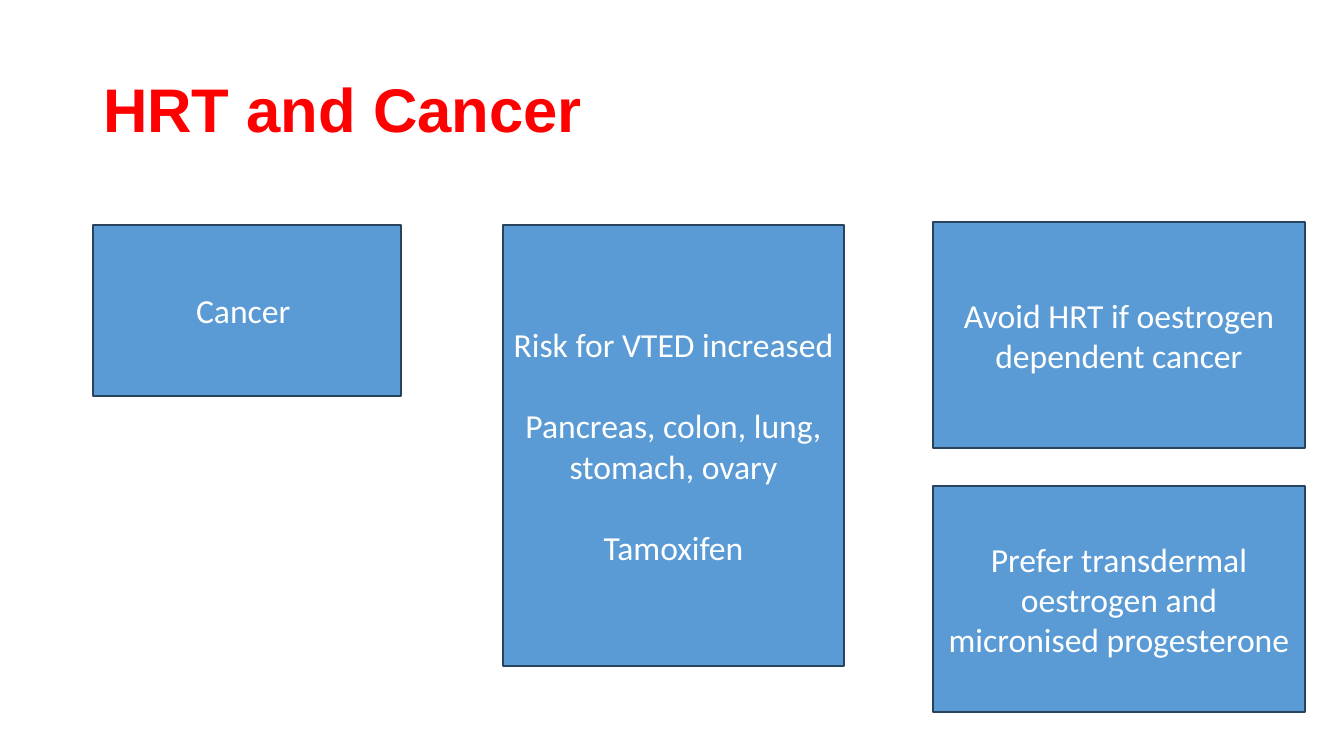
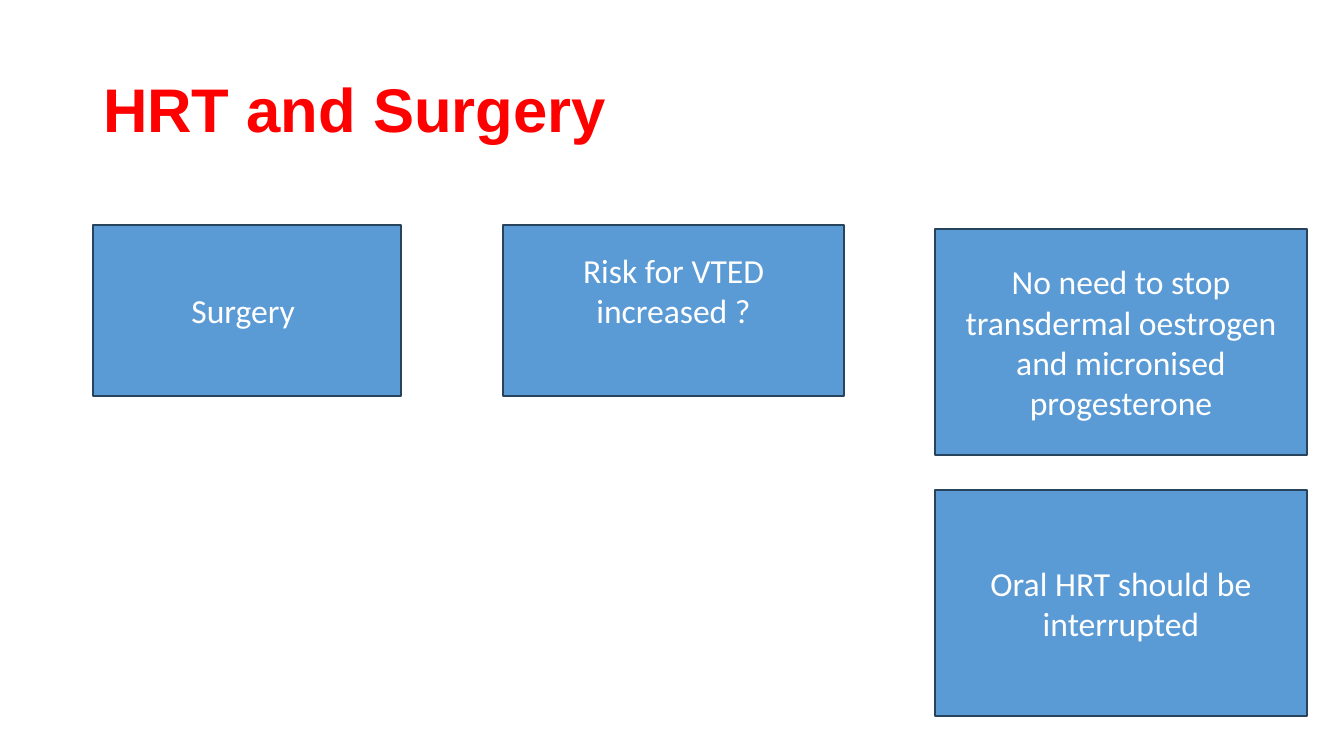
from pptx import Presentation
from pptx.dml.color import RGBColor
from pptx.enum.shapes import MSO_SHAPE
from pptx.enum.text import MSO_ANCHOR, MSO_AUTO_SIZE, PP_ALIGN
from pptx.util import Emu, Pt

RECTANGLE = MSO_SHAPE.RECTANGLE
MIDDLE = MSO_ANCHOR.MIDDLE
NO_FIT = MSO_AUTO_SIZE.NONE
LEFT, CENTER = PP_ALIGN.LEFT, PP_ALIGN.CENTER

EMU_PER_PX = 914400 / 100.8
PAGE_SIZE = (1344, 756)
TITLE_BOX = (93, 40, 1159, 146)
TITLE_ONLY = 5
COLORS = {
    "title": "FF0000",
    "card": "5B9BD5",
    "border": "28445D",
    "text": "FFFFFF",
}

TOPICS = [
    {
        "title": "HRT and Cancer",
        "condition": "Cancer ",
        "risk": ["Risk for VTED increased", "Pancreas, colon, lung, stomach, ovary", "Tamoxifen"],
        "risk_height": 441,
        "risk_gap": 29,
        "risk_inset": 5,
        "advice": ["Avoid HRT if oestrogen dependent cancer",
                   "Prefer transdermal oestrogen and micronised progesterone"],
        "advice_box": (933, 222, 372, 490),
    },
    {
        "title": "HRT and Surgery",
        "condition": "Surgery ",
        "risk": ["Risk for VTED", "increased ?"],
        "risk_height": 171,
        "risk_gap": 0,
        "risk_inset": 46,
        "advice": ["No need to stop transdermal oestrogen and micronised progesterone",
                   "Oral HRT should be interrupted"],
        "advice_box": (935, 229, 372, 487),
    },
]


def px(length):
    return Emu(round(length * EMU_PER_PX))


def color(name):
    return RGBColor.from_string(COLORS[name])


def style_font(para, name, size, color_name, bold=False):
    para.font.name = name
    para.font.size = Pt(size)
    para.font.bold = bold
    para.font.color.rgb = color(color_name)


def add_title(page, box, text):
    title = page.shapes.title
    title.left, title.top, title.width, title.height = map(px, box)
    frame = title.text_frame
    frame.text = text
    frame.word_wrap = True
    frame.auto_size = NO_FIT
    frame.vertical_anchor = MIDDLE
    para = frame.paragraphs[0]
    para.alignment = LEFT
    para.line_spacing = 0.9
    style_font(para, "Arial", 44, "title", bold=True)


def add_card(page, box, lines, gap=0, bottom_inset=5):
    card = page.shapes.add_shape(RECTANGLE, *map(px, box))
    card.shadow.inherit = False
    card.fill.solid()
    card.fill.fore_color.rgb = color("card")
    card.line.color.rgb = color("border")
    card.line.width = Pt(1)
    frame = card.text_frame
    frame.word_wrap = True
    frame.vertical_anchor = MIDDLE
    frame.margin_bottom = px(bottom_inset)
    frame.text = "\n".join(lines)
    for index, para in enumerate(frame.paragraphs):
        para.alignment = CENTER
        if index and gap:
            para.space_before = Pt(gap)
        style_font(para, "Calibri", 24, "text")


def add_advice(page, box, messages, card_height=226):
    left, top, width, height = box
    step = (height - card_height) / (len(messages) - 1)
    for index, message in enumerate(messages):
        add_card(page, (left, top + index * step, width, card_height), [message])


def add_topic_page(deck, topic):
    page = deck.slides.add_slide(deck.slide_layouts[TITLE_ONLY])
    add_title(page, TITLE_BOX, topic["title"])
    add_card(page, (93, 225, 308, 171), [topic["condition"]])
    add_card(page, (503, 225, 341, topic["risk_height"]), topic["risk"],
             topic["risk_gap"], topic["risk_inset"])
    add_advice(page, topic["advice_box"], topic["advice"])


def main():
    deck = Presentation()
    deck.slide_width, deck.slide_height = map(px, PAGE_SIZE)
    for topic in TOPICS:
        add_topic_page(deck, topic)
    deck.save("out.pptx")


if __name__ == "__main__":
    main()
